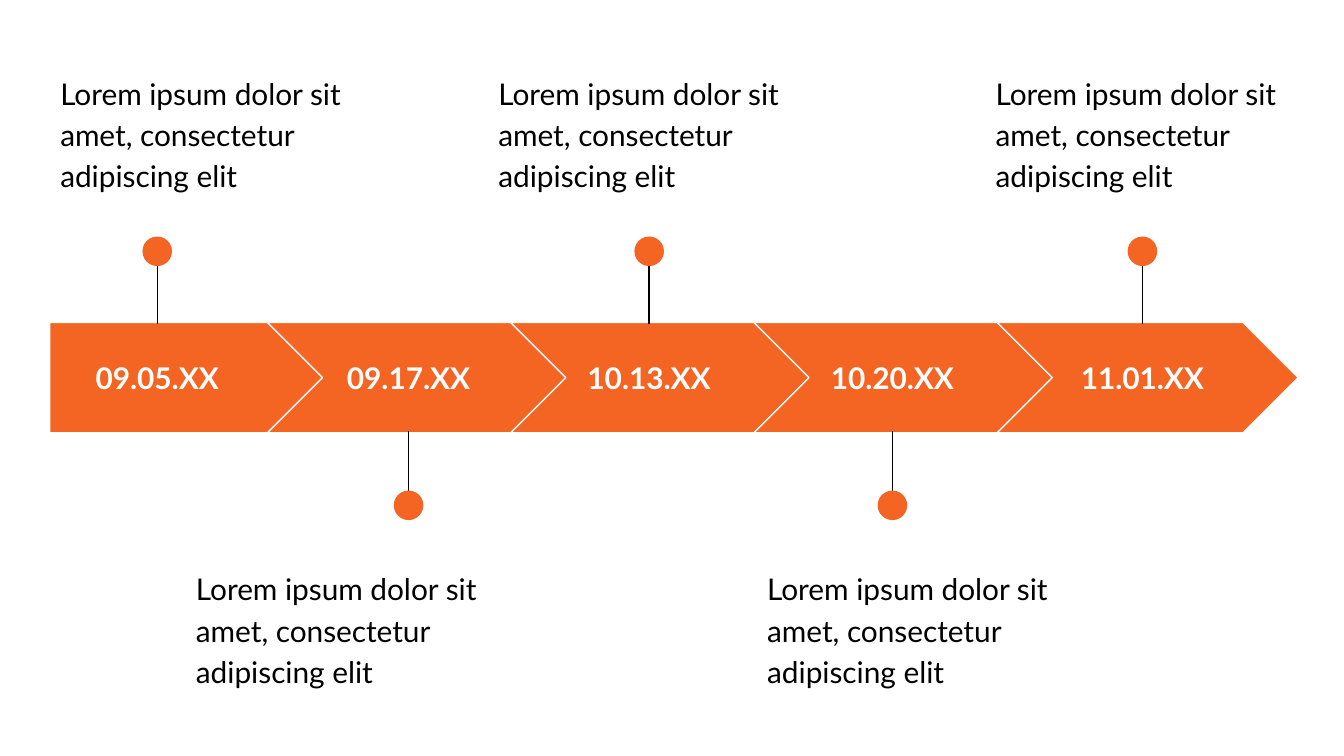
from lxml import etree
from pptx import Presentation
from pptx import util as u
from pptx.dml.color import RGBColor
from pptx.enum import shapes, text
from pptx.oxml.ns import qn

# Content: date, description, pin centre, left edge of description, side of the bar
BLURB = "Lorem ipsum dolor sit amet, consectetur adipiscing elit"
EVENTS = [
    ("09.05.XX", BLURB, 1.17, 0.35, "above"),
    ("09.17.XX", BLURB, 3.04, 1.36, "below"),
    ("10.13.XX", BLURB, 4.83, 3.61, "above"),
    ("10.20.XX", BLURB, 6.64, 5.61, "below"),
    ("11.01.XX", BLURB, 8.50, 7.31, "above"),
]

# Layout in inches, on a 16:9 slide
SLIDE_W = 10
SLIDE_H = SLIDE_W * 9 / 16
BAR_LEFT, BAR_TOP, BAR_H = 0.37, 2.4, 0.82
FIRST_W, CHEVRON_LEFT, CHEVRON_W, PITCH = 2.05, 1.99, 2.24, 1.81
DATE_W, DATE_H = 1.44, 0.51
BLURB_W, BLURB_H = 2.45, 0.99
DOT = 0.22
# Side: description top, dot top, line start in the dot, line end at the bar
SIDES = {
    "above": (0.42, 1.76, 1.8, 2.41),
    "below": (4.11, 3.65, 3.82, 3.21),
}
ORANGE, WHITE, BLACK = "F46524", "FFFFFF", "000000"


def rgb(value):
    return RGBColor.from_string(value)


def add_shape(parent, kind, *box, line=None):
    sp = parent.add_shape(kind, *map(u.Inches, box))
    sp.shadow.inherit = False
    sp.fill.solid()
    sp.fill.fore_color.rgb = rgb(ORANGE)
    if line:
        sp.line.color.rgb = rgb(line)
        sp.line.width = u.Pt(0.75)
    else:
        sp.line.fill.background()
    return sp


def add_text(parent, content, *box, color=BLACK, bold=False):
    tf = parent.add_textbox(*map(u.Inches, box)).text_frame
    tf.word_wrap = True
    tf.margin_left = tf.margin_right = u.Inches(0.1)
    tf.margin_top = tf.margin_bottom = u.Inches(0.1)
    tf.text = content
    p = tf.paragraphs[0]
    font = p.runs[0].font
    font.name, font.size, font.bold = "Lato", u.Pt(16), bold
    font.color.rgb = rgb(color)
    return tf, p


def add_pin(parent, x, dot_top, start_y, bar_y):
    group = parent.add_group_shape().shapes
    line = group.add_connector(
        shapes.MSO_CONNECTOR.STRAIGHT,
        *map(u.Inches, (x, start_y, x, bar_y)))
    line.line.color.rgb = rgb(BLACK)
    line.line.width = u.Pt(0.75)
    etree.SubElement(line._element.spPr, qn("a:effectLst"))
    add_shape(group, shapes.MSO_SHAPE.OVAL, x - DOT / 2, dot_top, DOT, DOT)


prs = Presentation()
prs.slide_width, prs.slide_height = u.Inches(SLIDE_W), u.Inches(SLIDE_H)
s = prs.slides.add_slide(prs.slide_layouts[6])

for i, (date, blurb, x, blurb_left, side) in enumerate(EVENTS):
    blurb_top, *pin = SIDES[side]

    # Arrow segment of the bar
    if i == 0:
        kind, left, width = shapes.MSO_SHAPE.PENTAGON, BAR_LEFT, FIRST_W
    else:
        kind, width = shapes.MSO_SHAPE.CHEVRON, CHEVRON_W
        left = CHEVRON_LEFT + (i - 1) * PITCH
    add_shape(s.shapes, kind, left, BAR_TOP, width, BAR_H, line=WHITE)

    # Date, centred on its pin
    tf, p = add_text(s.shapes, date, x - DATE_W / 2,
                     BAR_TOP + (BAR_H - DATE_H) / 2, DATE_W, DATE_H,
                     color=WHITE, bold=True)
    tf.vertical_anchor = text.MSO_ANCHOR.MIDDLE
    p.alignment = text.PP_ALIGN.CENTER

    # Pin and description
    add_pin(s.shapes, x, *pin)
    tf, p = add_text(s.shapes, blurb, blurb_left, blurb_top, BLURB_W, BLURB_H)
    p.line_spacing = 1.15
    p.space_after = u.Pt(16)

prs.save("out.pptx")
